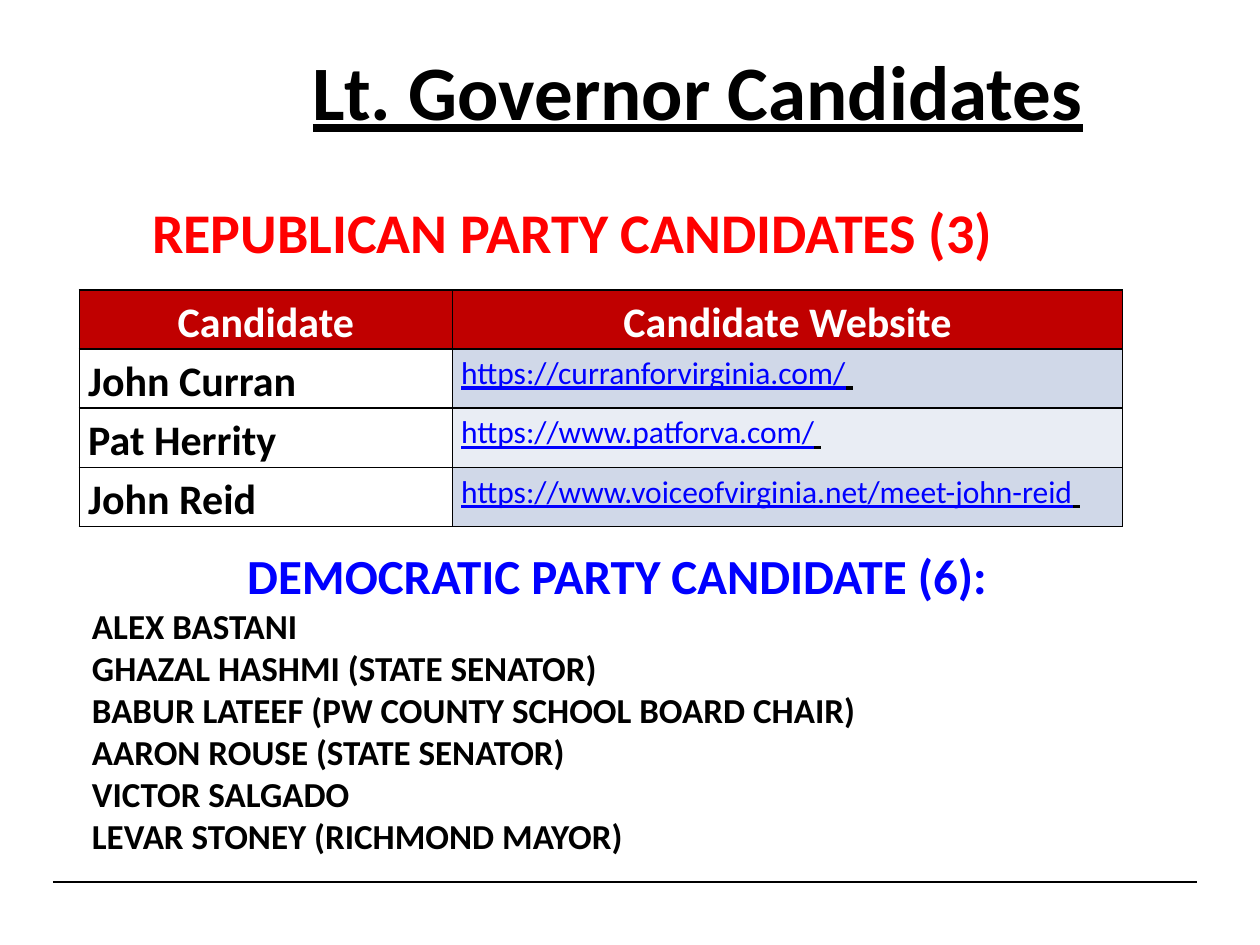
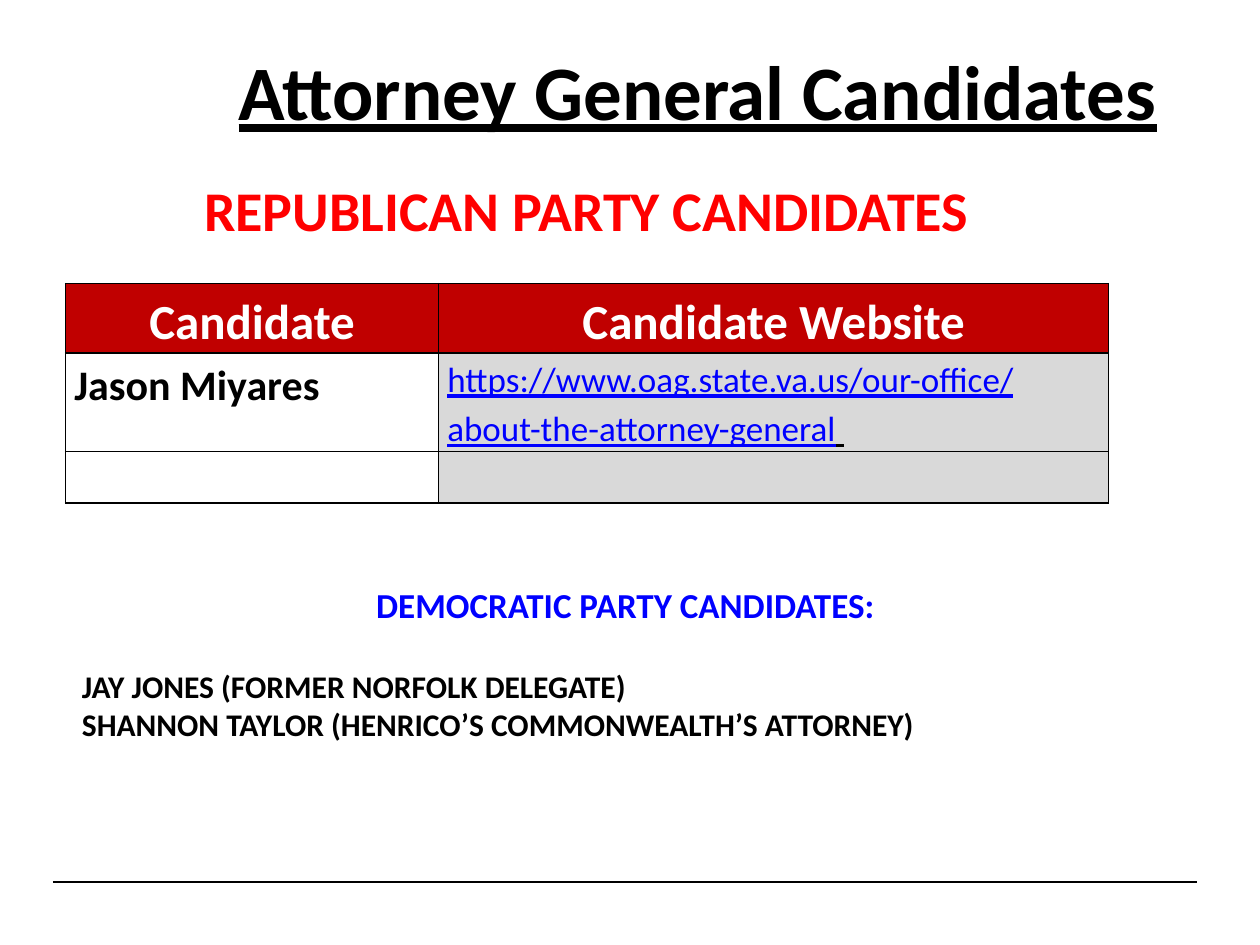
import pptx
import pptx.dml.color
import pptx.enum.shapes
import pptx.enum.text
import pptx.oxml
import pptx.oxml.ns
import pptx.util
from lxml import etree

RGBColor = pptx.dml.color.RGBColor
Inches, Pt = pptx.util.Inches, pptx.util.Pt
ALIGN = pptx.enum.text.PP_ALIGN

BLACK = RGBColor(0, 0, 0)
WHITE = RGBColor(0xFF, 0xFF, 0xFF)
RED = RGBColor(0xFF, 0, 0)
BLUE = RGBColor(0, 0, 0xFF)
HEADER_RED = RGBColor(0xC0, 0, 0)
BAND_DARK = RGBColor(0xD0, 0xD8, 0xE8)
BAND_LIGHT = RGBColor(0xE9, 0xED, 0xF4)
GRAY = RGBColor(0xD9, 0xD9, 0xD9)
FONT = "Calibri"

# Content: boxes are left, top, width, height in inches
HEADINGS = ("Candidate", "Candidate Website")
COLUMNS = (2.96, 5.32)
TITLE_BOX = (1.58, 0.17, 7.92, 1.08)
RACES = [
    {
        "title": "Lt. Governor Candidates",
        "republicans": "REPUBLICAN PARTY CANDIDATES (3)",
        "republicans_box": (1.11, 1.52, 7.78, 0.64),
        "republicans_align": ALIGN.LEFT,
        "table_at": (0.63, 2.3),
        "rows": (0.47, 0.47, 0.47, 0.47),
        "header_size": 24,
        "link_size": 18,
        "bands": (BAND_DARK, BAND_LIGHT),
        "candidates": [
            ("John Curran", "https://curranforvirginia.com/"),
            ("Pat Herrity", "https://www.patforva.com/"),
            ("John Reid", "https://www.voiceofvirginia.net/meet-john-reid"),
        ],
        "democrats": "DEMOCRATIC PARTY CANDIDATE (6): ",
        "democrats_box": (0.63, 4.28, 8.62, 2.65),
        "democrats_sizes": (28, 20),
        "list_gap": 0,
        "names": [
            "ALEX BASTANI",
            "GHAZAL HASHMI (STATE SENATOR)",
            "BABUR LATEEF (PW COUNTY SCHOOL BOARD CHAIR)",
            "AARON ROUSE (STATE SENATOR)",
            "VICTOR SALGADO",
            "LEVAR STONEY (RICHMOND MAYOR)",
        ],
    },
    {
        "title": "Attorney General Candidates",
        "republicans": "REPUBLICAN PARTY CANDIDATES",
        "republicans_box": (1.32, 1.34, 6.67, 0.64),
        "republicans_align": ALIGN.CENTER,
        "table_at": (0.52, 2.25),
        "rows": (0.55, 0.78, 0.41),
        "header_size": 28,
        "link_size": 20,
        "bands": (GRAY,),
        "candidates": [
            ("Jason Miyares",
             "https://www.oag.state.va.us/our-office/about-the-attorney-general"),
            ("", ""),
        ],
        "democrats": "DEMOCRATIC PARTY CANDIDATES: ",
        "democrats_box": (0.55, 4.58, 8.89, 1.38),
        "democrats_sizes": (20, 18),
        "list_gap": 24,
        "names": [
            "JAY JONES (FORMER NORFOLK DELEGATE)",
            "SHANNON TAYLOR (HENRICO’S COMMONWEALTH’S ATTORNEY)",
        ],
    },
]


def write(paragraph, text, size, color=BLACK, bold=True, underline=None,
          align=ALIGN.LEFT, spacing=None, before=None):
    """Append a formatted run to a paragraph."""
    paragraph.alignment = align
    if spacing:
        paragraph.line_spacing = spacing
    if before is not None:
        paragraph.space_before = Pt(before)
    run = paragraph.add_run()
    run.text = text
    font = run.font
    font.name, font.size, font.bold, font.underline = FONT, Pt(size), bold, underline
    font.color.rgb = color


def place(shape, box):
    """Position a text shape and return its wrapped text frame."""
    shape.left, shape.top, shape.width, shape.height = map(Inches, box)
    frame = shape.text_frame
    frame.word_wrap = True
    frame.auto_size = pptx.enum.text.MSO_AUTO_SIZE.NONE
    return frame


def remove_bullet(paragraph):
    properties = paragraph._p.get_or_add_pPr()
    properties.set("marL", "0")
    properties.set("indent", "0")
    etree.SubElement(properties, pptx.oxml.ns.qn("a:buNone"))


def style_cell(cell, fill):
    """Set margins, fill and a thin black border on every side."""
    cell.margin_left = cell.margin_right = Inches(0.07)
    cell.margin_top = cell.margin_bottom = 0
    properties = cell._tc.get_or_add_tcPr()
    for side in ("lnL", "lnR", "lnT", "lnB"):
        properties.append(pptx.oxml.parse_xml(
            f'<a:{side} {pptx.oxml.ns.nsdecls("a")} w="{Pt(1)}"><a:solidFill>'
            f'<a:srgbClr val="{BLACK}"/></a:solidFill></a:{side}>'))
    if fill is None:
        cell.fill.background()
    else:
        cell.fill.solid()
        cell.fill.fore_color.rgb = fill


def add_candidate_table(slide, race):
    heights = race["rows"]
    box = (*race["table_at"], sum(COLUMNS), sum(heights))
    table = slide.shapes.add_table(
        len(heights), len(COLUMNS), *map(Inches, box)).table
    table.horz_banding = False
    for column, width in zip(table.columns, COLUMNS):
        column.width = Inches(width)
    for row, height in zip(table.rows, heights):
        row.height = Inches(height)

    for column, heading in enumerate(HEADINGS):
        cell = table.cell(0, column)
        style_cell(cell, HEADER_RED)
        write(cell.text_frame.paragraphs[0], heading, race["header_size"],
              color=WHITE, align=ALIGN.CENTER, spacing=1.15)

    bands = race["bands"]
    for index, (name, website) in enumerate(race["candidates"]):
        name_cell, website_cell = table.rows[index + 1].cells
        style_cell(name_cell, None)
        style_cell(website_cell, bands[index % len(bands)])
        if name:
            write(name_cell.text_frame.paragraphs[0], name, 24, spacing=1.15)
            for text, color in ((website, BLUE), (" ", BLACK)):
                write(website_cell.text_frame.paragraphs[0], text,
                      race["link_size"], color=color, bold=False,
                      underline=True, spacing=1.15)


def add_democrats(slide, race):
    frame = place(slide.placeholders[1], race["democrats_box"])
    heading_size, name_size = race["democrats_sizes"]
    heading = frame.paragraphs[0]
    remove_bullet(heading)
    write(heading, race["democrats"], heading_size, color=BLUE,
          align=ALIGN.CENTER, before=0)
    for index, name in enumerate(race["names"]):
        entry = frame.add_paragraph()
        remove_bullet(entry)
        write(entry, name, name_size, before=0 if index else race["list_gap"])


def add_footer_rule(slide):
    rule = slide.shapes.add_connector(
        pptx.enum.shapes.MSO_CONNECTOR.STRAIGHT,
        *map(Inches, (0.42, 7, 9.5, 7)))
    rule.line.color.rgb = BLACK
    rule.line.width = Pt(1.5)
    etree.SubElement(rule._element.spPr, pptx.oxml.ns.qn("a:effectLst"))


def add_race(deck, race):
    slide = deck.slides.add_slide(deck.slide_layouts[1])
    title = place(slide.shapes.title, TITLE_BOX)
    write(title.paragraphs[0], race["title"], 44, underline=True,
          align=ALIGN.CENTER)
    add_candidate_table(slide, race)
    box = race["republicans_box"]
    republicans = place(slide.shapes.add_textbox(*map(Inches, box)), box)
    write(republicans.paragraphs[0], race["republicans"], 32, color=RED,
          align=race["republicans_align"])
    add_footer_rule(slide)
    add_democrats(slide, race)


def main():
    deck = pptx.Presentation()
    deck.slide_width, deck.slide_height = Inches(10), Inches(7.5)
    for race in RACES:
        add_race(deck, race)
    deck.save("out.pptx")


if __name__ == "__main__":
    main()
